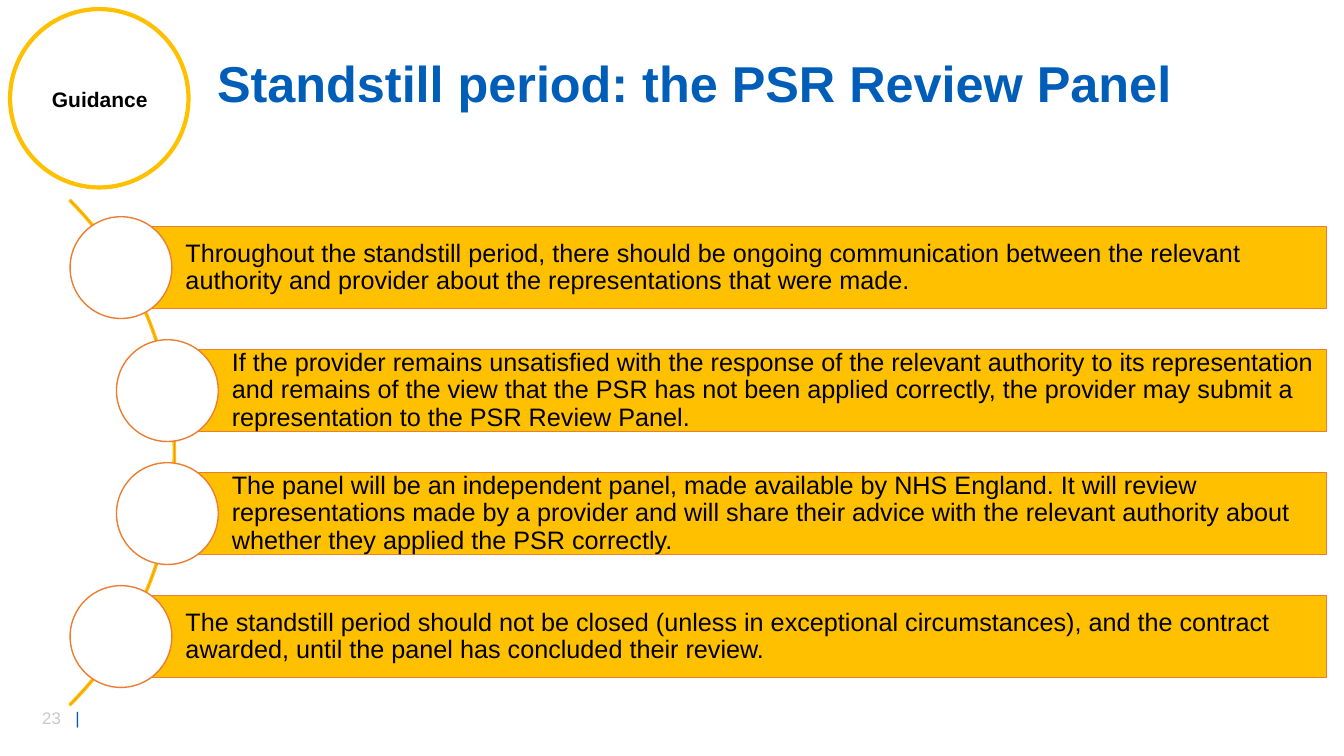
from lxml.etree import SubElement as Sub
from pptx import Presentation
from pptx.dml.color import RGBColor as Rgb
from pptx.enum.shapes import MSO_SHAPE as Kind
from pptx.enum.text import MSO_ANCHOR as Anchor, PP_ALIGN as Align
from pptx.oxml.ns import qn
from pptx.util import Inches, Pt

COLORS = {
    "blue": "005EB8",
    "gold": "FFC000",
    "orange": "ED7D31",
    "white": "FFFFFF",
    "black": "000000",
    "gray": "C9C9C9",
}

# Left edge and wording of each bar
POINTS = [
    (1.2, "Throughout the standstill period, there should be ongoing communication "
          "between the relevant authority and provider about the representations "
          "that were made."),
    (1.66, "If the provider remains unsatisfied with the response of the relevant "
           "authority to its representation and remains of the view that the PSR has "
           "not been applied correctly, the provider may submit a representation to "
           "the PSR Review Panel."),
    (1.66, "The panel will be an independent panel, made available by NHS England. "
           "It will review representations made by a provider and will share their "
           "advice with the relevant authority about whether they applied the PSR "
           "correctly."),
    (1.2, "The standstill period should not be closed (unless in exceptional "
          "circumstances), and the contract awarded, until the panel has concluded "
          "their review."),
]
TOP, STEP, TALL, RIGHT, DOT = 2.25, 1.22, 0.81, 13.16, 1.01


def color(name):
    return Rgb.from_string(COLORS[name])


def write(shape, *runs, size=18, bold=False, align=Align.LEFT, anchor=Anchor.TOP,
          left=0.1, side=0.05, space=1.0, tab=None):
    """Fill a shape with one paragraph of (text, color) runs."""
    frame = shape.text_frame
    frame.word_wrap = True
    frame.vertical_anchor = anchor
    frame.margin_left = Inches(left)
    frame.margin_right = frame.margin_top = frame.margin_bottom = Inches(side)
    para = frame.paragraphs[0]
    para.alignment = align
    para.line_spacing = space
    if tab:
        stops = Sub(para._p.get_or_add_pPr(), qn("a:tabLst"))
        Sub(stops, qn("a:tab"), pos=str(Inches(tab)), algn="l")
    for text, tint in runs:
        run = para.add_run()
        run.text = text
        run.font.name = "Arial"
        run.font.size = Pt(size)
        run.font.bold = bold
        run.font.color.rgb = color(tint)


class Deck:
    def __init__(self):
        self.show = Presentation()
        self.show.slide_width = Inches(13.33)
        self.show.slide_height = Inches(7.5)
        self.slide = self.show.slides.add_slide(self.show.slide_layouts[6])

    def shape(self, kind, x, y, w, h, fill, line, width=1):
        item = self.slide.shapes.add_shape(
            kind, Inches(x), Inches(y), Inches(w), Inches(h))
        item.shadow.inherit = False
        item.fill.solid()
        item.fill.fore_color.rgb = color(fill)
        item.line.color.rgb = color(line)
        item.line.width = Pt(width)
        return item

    def text(self, x, y, w, h, *runs, **style):
        box = self.slide.shapes.add_textbox(
            Inches(x), Inches(y), Inches(w), Inches(h))
        write(box, *runs, **style)

    def arc(self, x, y, size):
        item = self.shape(Kind.BLOCK_ARC, x, y, size, size, "orange", "gold")
        for i, value in enumerate((189, 27, 0.003)):
            item.adjustments[i] = value

    def point(self, x, y, text):
        bar = self.shape(Kind.RECTANGLE, x, y, RIGHT - x, TALL, "gold", "orange")
        write(bar, (text, "black"), anchor=Anchor.MIDDLE, left=0.64, space=0.9)
        self.shape(Kind.OVAL, x - DOT / 2, y + (TALL - DOT) / 2, DOT, DOT,
                   "white", "orange")


def main():
    deck = Deck()

    # Page number
    deck.text(0.32, 6.97, 0.71, 0.3, ("23\t", "gray"), ("|", "blue"),
              size=12, tab=0.33)

    # Title
    deck.text(1.95, 0.38, 9.88, 0.95,
              ("Standstill period: the PSR Review Panel", "blue"), size=36, bold=True,
              align=Align.CENTER, anchor=Anchor.MIDDLE, side=0.1, space=0.9)

    # Guidance badge
    deck.shape(Kind.OVAL, 0.1, 0.09, 1.77, 1.77, "white", "gold", 3)
    deck.text(0.41, 0.81, 1.16, 0.35, ("Guidance", "black"), size=15, bold=True,
              align=Align.CENTER, side=0.05, left=0.05)

    # Curved list
    deck.arc(-5.36, 0.94, 7.1)
    for i, (x, text) in enumerate(POINTS):
        deck.point(x, TOP + i * STEP, text)

    deck.show.save("out.pptx")


if __name__ == "__main__":
    main()
